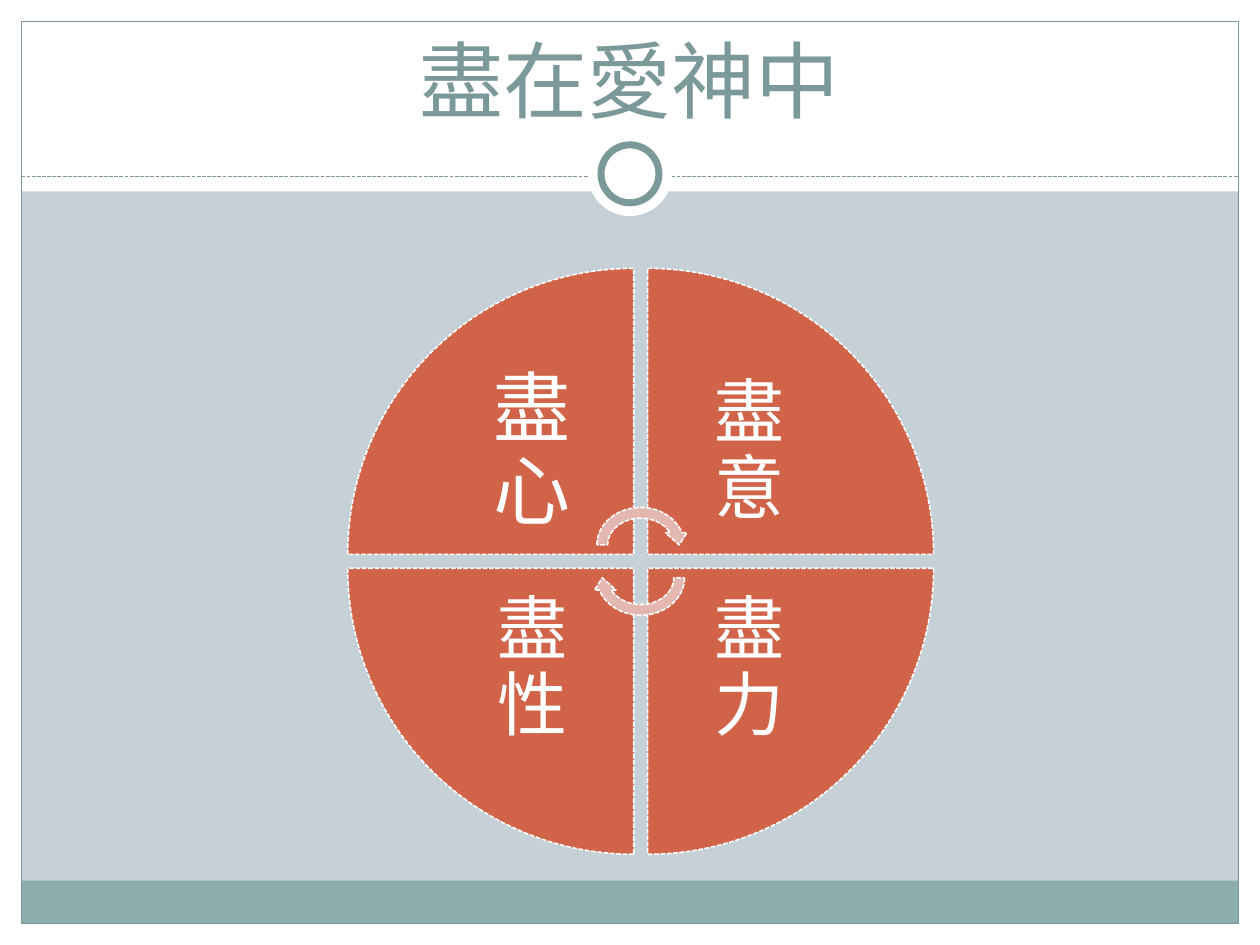
import pptx
import pptx.dml.color
import pptx.enum.dml
import pptx.enum.shapes
import pptx.enum.text
import pptx.oxml
import pptx.oxml.ns
import pptx.util

Inches = pptx.util.Inches
Pt = pptx.util.Pt
SHAPE = pptx.enum.shapes.MSO_SHAPE
ANCHOR = pptx.enum.text.MSO_ANCHOR
DASH = pptx.enum.dml.MSO_LINE.SQUARE_DOT  # written to the file as sysDash

FONT = "Roboto"
WHITE = "FFFFFF"
BACKGROUND = "C5D1D7"
TEAL = "7C999A"
FOOTER = "8CADAE"
WEDGE = "D16349"
ARROW = "E5B7B1"


def color(value):
    return pptx.dml.color.RGBColor.from_string(value)


def set_line(line, value, width, dashed=False):
    line.color.rgb = color(value)
    line.width = Pt(width)
    if dashed:
        line.dash_style = DASH


def add_shape(slide, kind, box, fill=None, line=None, width=0.75, dashed=False, rotation=0):
    shape = slide.shapes.add_shape(kind, *[Inches(length) for length in box])
    shape.shadow.inherit = False
    shape.rotation = rotation
    if fill:
        shape.fill.solid()
        shape.fill.fore_color.rgb = color(fill)
    else:
        shape.fill.background()
    if line:
        set_line(shape.line, line, width, dashed)
    else:
        shape.line.fill.background()
    return shape


def write_text(frame, text, size, value, anchor):
    frame.word_wrap = True
    frame.auto_size = pptx.enum.text.MSO_AUTO_SIZE.NONE
    frame.vertical_anchor = anchor
    paragraph = frame.paragraphs[0]
    paragraph.alignment = pptx.enum.text.PP_ALIGN.CENTER
    run = paragraph.add_run()
    run.text = text
    run.font.name = FONT
    run.font.size = Pt(size)
    run.font.color.rgb = color(value)
    return paragraph


def add_frame(slide, width, height):
    """White margins, header band, footer band, border and the ring on the divider."""
    margin, header, divider = 0.17, 1.52, 1.4
    inner_width = width - 2 * margin
    for box in (
        (0, height - margin, width, margin),
        (0, 0, width, header),
        (0, 0, margin, height),
        (width - margin, 0, margin, height),
    ):
        add_shape(slide, SHAPE.RECTANGLE, box, WHITE)
    add_shape(slide, SHAPE.RECTANGLE, (margin, 6.99, inner_width, 0.34), FOOTER)
    add_shape(slide, SHAPE.RECTANGLE,
              (margin, margin, inner_width, height - 2 * margin), line=TEAL)

    connector = slide.shapes.add_connector(
        pptx.enum.shapes.MSO_CONNECTOR.STRAIGHT,
        Inches(margin), Inches(divider), Inches(width - margin), Inches(divider))
    set_line(connector.line, TEAL, 0.75, dashed=True)
    connector._element.spPr.append(pptx.oxml.parse_xml(
        "<a:effectLst %s/>" % pptx.oxml.ns.nsdecls("a")))

    ring_middle = 1.38
    for diameter, line in ((0.67, None), (0.46, TEAL)):
        box = (width / 2 - diameter / 2, ring_middle - diameter / 2, diameter, diameter)
        add_shape(slide, SHAPE.OVAL, box, WHITE, line, 4)


def place_title(slide, text, box):
    title = slide.shapes.title
    title.left, title.top, title.width, title.height = [Inches(length) for length in box]
    write_text(title.text_frame, text, 48, TEAL, ANCHOR.BOTTOM)
    # Bring the title in front of the header band.
    title._element.getparent().append(title._element)


def add_wheel(slide, left, top, size):
    """Four wedges, clockwise from the top left, with two arrows round the centre."""
    wedge, label = 2.27, 1.61
    quarters = (
        ("盡心", 44, 0.34, 0, 0),
        ("盡意", 40, 0.31, 1, 0),
        ("盡力", 40, 0.31, 1, 1),
        ("盡性", 40, 0.31, 0, 1),
    )
    for index, (text, font_size, inset, column, row) in enumerate(quarters):
        x = left + column * (size - wedge)
        y = top + row * (size - wedge)
        add_shape(slide, SHAPE.PIE_WEDGE, (x, y, wedge, wedge), WEDGE,
                  WHITE, 0.9, True, 90 * index)
        # Each label sits in the corner of its wedge nearest the centre.
        text_box = slide.shapes.add_textbox(
            Inches(x + (1 - column) * (wedge - label)),
            Inches(y + (1 - row) * (wedge - label)), Inches(label), Inches(label))
        frame = text_box.text_frame
        frame.margin_left = frame.margin_right = Inches(inset)
        frame.margin_top = frame.margin_bottom = Inches(inset)
        paragraph = write_text(frame, text, font_size, WHITE, ANCHOR.MIDDLE)
        paragraph.line_spacing = 0.9

    arrow_width, arrow_height, offset = 0.78, 0.68, 0.13
    for side, rotation in ((-1, 0), (1, 180)):
        box = (left + (size - arrow_width) / 2,
               top + (size - arrow_height) / 2 + side * offset,
               arrow_width, arrow_height)
        add_shape(slide, SHAPE.CIRCULAR_ARROW, box, ARROW, WHITE, 0.9, True, rotation)


def main():
    width, height = 10, 7.5
    presentation = pptx.Presentation()
    presentation.slide_width = Inches(width)
    presentation.slide_height = Inches(height)
    slide = presentation.slides.add_slide(presentation.slide_layouts[5])
    slide.background.fill.solid()
    slide.background.fill.fore_color.rgb = color(BACKGROUND)
    add_frame(slide, width, height)
    place_title(slide, "盡在愛神中", (0.33, 0.25, 9.33, 0.83))
    add_wheel(slide, 2.76, 2.13, 4.65)
    presentation.save("out.pptx")


if __name__ == "__main__":
    main()
